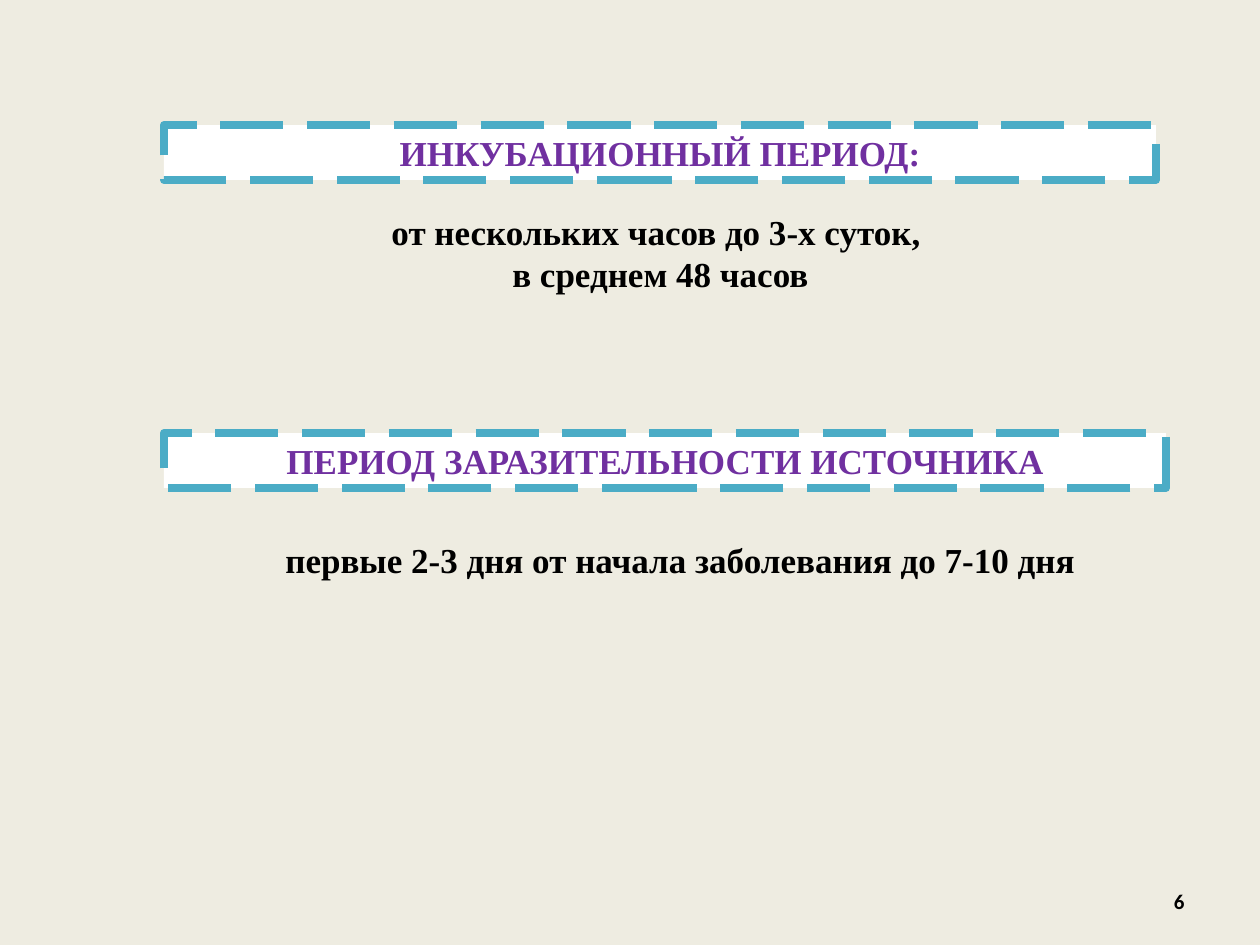
from pptx import Presentation
from pptx.dml.color import RGBColor
from pptx.enum.dml import MSO_LINE
from pptx.enum.shapes import MSO_SHAPE
from pptx.enum.text import MSO_ANCHOR as Anchor, PP_ALIGN as Align
from pptx.util import Pt

SAND = RGBColor(0xEE, 0xEC, 0xE1)
WHITE = RGBColor(0xFF, 0xFF, 0xFF)
TEAL = RGBColor(0x4B, 0xAC, 0xC6)
PURPLE = RGBColor(0x70, 0x30, 0xA0)
BLACK = RGBColor(0, 0, 0)
SERIF = "Times New Roman"
SCALE = 914400 / 126


def px(*vals):
    return [round(val * SCALE) for val in vals]


def write(shape, lines, color=BLACK, align=Align.CENTER, size=20,
          face=SERIF, anchor=Anchor.TOP):
    frame = shape.text_frame
    frame.word_wrap = True
    frame.vertical_anchor = anchor
    frame.text = "\n".join(lines)
    for para in frame.paragraphs:
        para.alignment = align
        font = para.font
        font.name = face
        font.size = Pt(size)
        font.bold = True
        font.color.rgb = color


def banner(slide, box, text):
    bar = slide.shapes.add_shape(MSO_SHAPE.RECTANGLE, *px(*box))
    bar.shadow.inherit = False
    bar.fill.solid()
    bar.fill.fore_color.rgb = WHITE
    bar.line.color.rgb = TEAL
    bar.line.width = Pt(4.5)
    bar.line.dash_style = MSO_LINE.LONG_DASH
    write(bar, [text], PURPLE)


def label(slide, box, lines, **style):
    write(slide.shapes.add_textbox(*px(*box)), lines, **style)


def period(slide, box, title, inset, lines, align):
    left, top, width, height = box
    banner(slide, box, title)
    dx, dy, wide, high = inset
    label(slide, (left + dx, top + dy, wide, high), lines, align=align)


def footer(slide, box, number):
    label(slide, box, [number], align=Align.RIGHT, size=12,
          face="Calibri", anchor=Anchor.MIDDLE)


def main():
    deck = Presentation()
    deck.slide_width, deck.slide_height = px(1260, 945)
    slide = deck.slides.add_slide(deck.slide_layouts[6])
    fill = slide.background.fill
    fill.solid()
    fill.fore_color.rgb = SAND
    period(slide, (164, 125, 992, 55), "ИНКУБАЦИОННЫЙ ПЕРИОД:",
           (189, 79, 615, 97),
           ["от нескольких часов до 3-х суток, ", "в среднем 48 часов"],
           Align.CENTER)
    period(slide, (164, 433, 1002, 55), "ПЕРИОД ЗАРАЗИТЕЛЬНОСТИ ИСТОЧНИКА",
           (109, 99, 853, 55),
           ["первые 2-3 дня от начала заболевания до 7-10 дня"],
           Align.LEFT)
    footer(slide, (903, 876, 294, 50), "6")
    deck.save("out.pptx")


if __name__ == "__main__":
    main()
